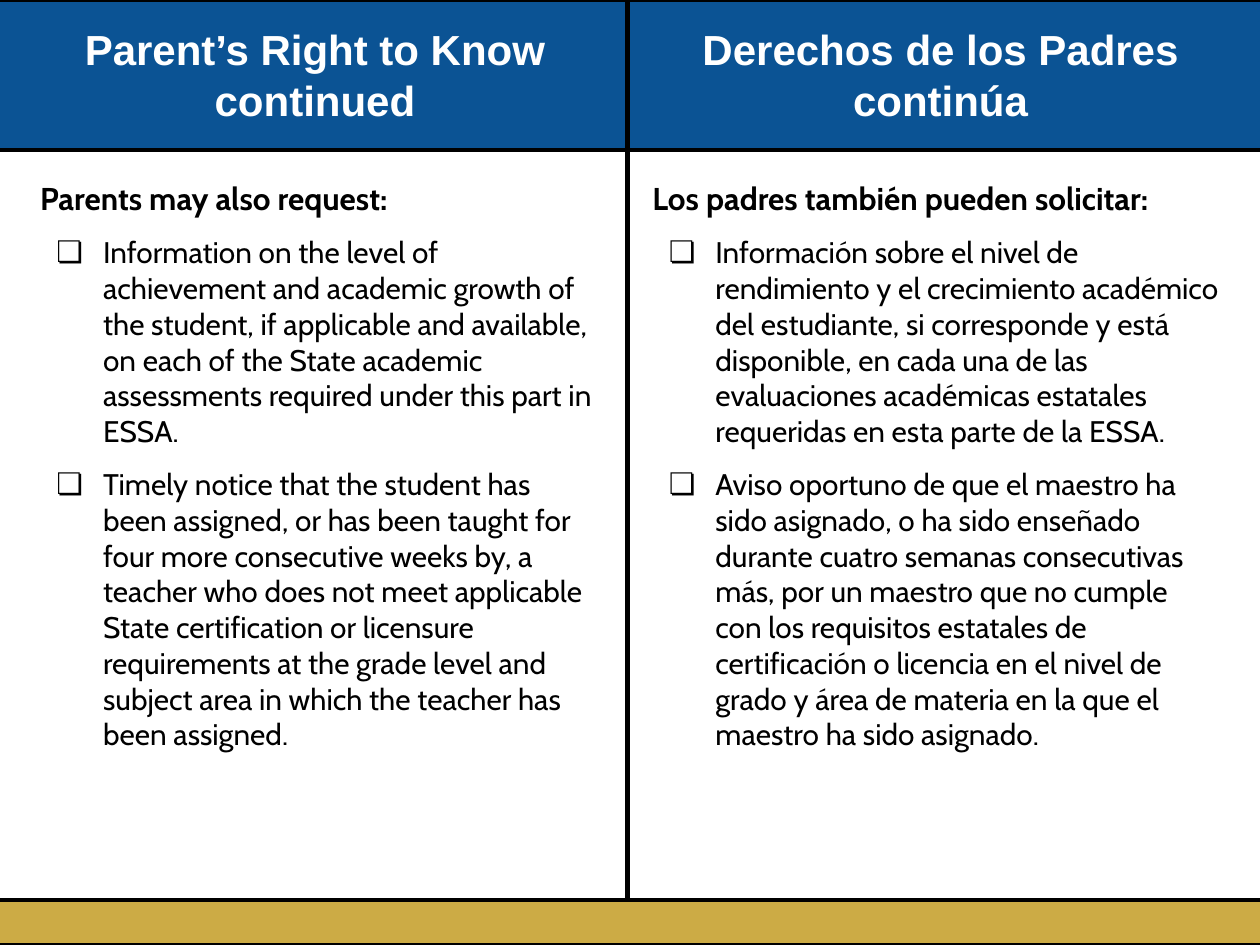
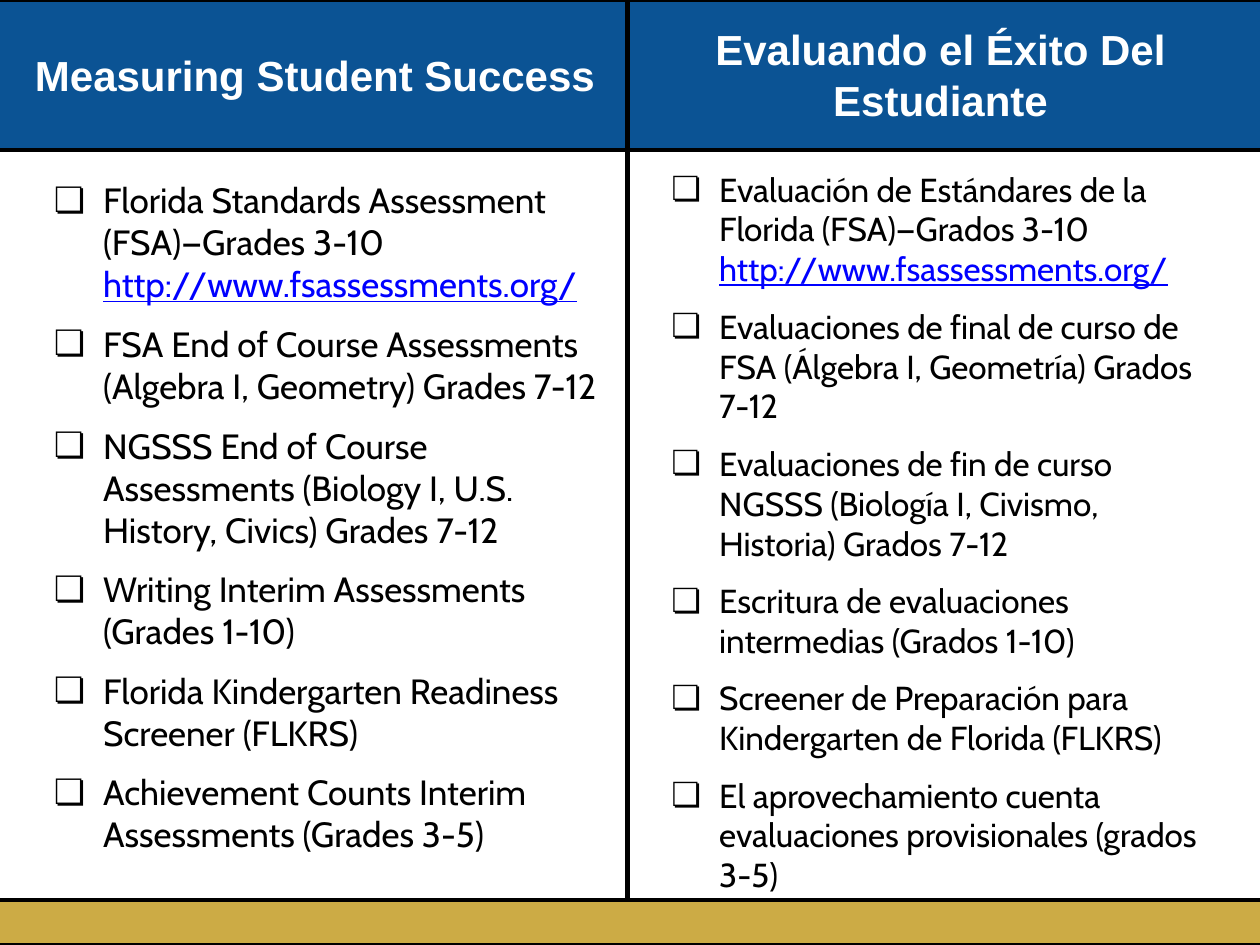
from lxml.etree import SubElement
from pptx import Presentation
from pptx.dml.color import RGBColor
from pptx.enum.shapes import MSO_CONNECTOR as Connector, MSO_SHAPE as Shape
from pptx.enum.text import MSO_ANCHOR as Anchor, MSO_AUTO_SIZE as AutoSize, PP_ALIGN as Align
from pptx.oxml.ns import qn
from pptx.util import Inches, Pt

BLACK, WHITE, BLUE, GOLD, LINK = "000000", "FFFFFF", "0B5394", "CCAB45", "0000FF"
HEADING_FONT, BODY_FONT = "Arial", "Cabin"
HEADING_PLACES = [(0.15, 0.21, 4.7, 0.76), (5.08, 0.21, 4.77, 0.76)]
LINK_TEXT = "http://www.fsassessments.org/"

SLIDES = [
    [
        {
            "heading": "Parent’s Right to Know continued",
            "place": (0.22, 1.32, 4.63, 5.63), "size": 17, "hanging": 0.37,
            "lead": "Parents may also request:",
            "items": [
                "Information on the level of achievement and academic growth of the student, "
                "if applicable and available, on each of the State academic assessments "
                "required under this part in ESSA.",
                "Timely notice that the student has been assigned, or has been taught for four "
                "more consecutive weeks by, a teacher who does not meet applicable State "
                "certification or licensure requirements at the grade level and subject area "
                "in which the teacher has been assigned.",
            ],
        },
        {
            "heading": "Derechos de los Padres continúa",
            "place": (5.08, 1.32, 4.7, 5.63), "size": 17, "hanging": 0.37,
            "lead": "Los padres también pueden solicitar:",
            "items": [
                "Información sobre el nivel de rendimiento y el crecimiento académico del "
                "estudiante, si corresponde y está disponible, en cada una de las evaluaciones "
                "académicas estatales requeridas en esta parte de la ESSA.",
                "Aviso oportuno de que el maestro ha sido asignado, o ha sido enseñado durante "
                "cuatro semanas consecutivas más, por un maestro que no cumple con los "
                "requisitos estatales de certificación o licencia en el nivel de grado y área "
                "de materia en la que el maestro ha sido asignado.",
            ],
        },
    ],
    [
        {
            "heading": "Measuring Student Success",
            "place": (0.22, 1.32, 4.63, 5.63), "size": 20, "hanging": 0.39,
            "items": [
                "Florida Standards Assessment (FSA)—Grades 3-10 " + LINK_TEXT,
                "FSA End of Course Assessments (Algebra I, Geometry) Grades 7-12",
                "NGSSS End of Course Assessments (Biology I, U.S. History, Civics) Grades 7-12",
                "Writing Interim Assessments (Grades 1-10)",
                "Florida Kindergarten Readiness Screener (FLKRS)",
                "Achievement Counts Interim Assessments (Grades 3-5)",
            ],
        },
        {
            "heading": "Evaluando el Éxito Del Estudiante",
            "place": (5.11, 1.24, 4.69, 5.63), "size": 19, "hanging": 0.38,
            "items": [
                "Evaluación de Estándares de la Florida (FSA)—Grados 3-10 " + LINK_TEXT,
                "Evaluaciones de final de curso de FSA (Álgebra I, Geometría) Grados 7-12",
                "Evaluaciones de fin de curso NGSSS (Biología I, Civismo, Historia) Grados 7-12",
                "Escritura de evaluaciones intermedias (Grados 1-10)",
                "Screener de Preparación para Kindergarten de Florida (FLKRS)",
                "El aprovechamiento cuenta evaluaciones provisionales (grados 3-5)",
            ],
        },
    ],
]


def color(value):
    """Turn a hex string into a colour."""
    return RGBColor.from_string(value)


def add_text(paragraph, text, font=BODY_FONT, size=18, fill=BLACK, bold=False, underline=False):
    """Add one formatted run to a paragraph."""
    run = paragraph.add_run()
    run.text = text
    run.font.name, run.font.size = font, Pt(size)
    run.font.bold, run.font.underline = bold, underline
    run.font.color.rgb = color(fill)


def add_band(slide, top, height, fill):
    """Add an outlined band across the slide."""
    band = slide.shapes.add_shape(
        Shape.RECTANGLE, Inches(-0.14), Inches(top), Inches(10.24), Inches(height))
    band.shadow.inherit = False
    band.fill.solid()
    band.fill.fore_color.rgb = color(fill)
    band.line.color.rgb = color(BLACK)
    band.line.width = Pt(2.25)


def add_divider(slide):
    """Add the vertical line between the two languages."""
    divider = slide.shapes.add_connector(
        Connector.STRAIGHT, Inches(4.98), Inches(0), Inches(4.98), Inches(7.14))
    divider.line.color.rgb = color(BLACK)
    divider.line.width = Pt(3)
    SubElement(divider.element.spPr, qn("a:effectLst"))


def set_frame(shape, anchor):
    """Give a text shape its wrapping, insets and anchor, and return its frame."""
    frame = shape.text_frame
    frame.word_wrap, frame.auto_size = True, AutoSize.NONE
    frame.margin_left = frame.margin_right = Inches(0.1)
    frame.margin_top = frame.margin_bottom = Inches(0.1)
    frame.vertical_anchor = anchor
    return frame


def format_heading(shape, place, text):
    """Place a heading and fill in its text."""
    shape.left, shape.top, shape.width, shape.height = map(Inches, place)
    paragraph = set_frame(shape, Anchor.MIDDLE).paragraphs[0]
    paragraph.alignment = Align.CENTER
    add_text(paragraph, text, font=HEADING_FONT, size=24, fill=WHITE, bold=True)


def add_bullet(paragraph, hanging):
    """Give a paragraph a hanging box bullet."""
    properties = paragraph._p.get_or_add_pPr()
    properties.set("marL", str(Inches(0.5)))
    properties.set("indent", str(-Inches(hanging)))
    bullet_color = SubElement(properties, qn("a:buClr"))
    SubElement(bullet_color, qn("a:srgbClr"), val=BLACK)
    SubElement(properties, qn("a:buFont"), typeface=BODY_FONT)
    SubElement(properties, qn("a:buChar"), char="❏")


def add_body(slide, column):
    """Add the lead line and the bulleted items of one column."""
    box = slide.shapes.add_textbox(*map(Inches, column["place"]))
    box.fill.solid()
    box.fill.fore_color.rgb = color(WHITE)
    frame = set_frame(box, Anchor.TOP)
    lead = column.get("lead")
    if lead:
        add_text(frame.paragraphs[0], lead, bold=True)
    for index, item in enumerate(column["items"]):
        first = index == 0 and not lead
        paragraph = frame.paragraphs[0] if first else frame.add_paragraph()
        add_bullet(paragraph, column["hanging"])
        if not first:
            paragraph.space_before = Pt(10)
        plain, link, _ = item.partition(LINK_TEXT)
        add_text(paragraph, plain, size=column["size"])
        if link:
            add_text(paragraph, link, size=column["size"], fill=LINK, underline=True)


def add_slide(presentation, columns):
    """Build one slide with an English and a Spanish column."""
    slide = presentation.slides.add_slide(presentation.slide_layouts[5])
    add_band(slide, 0, 1.19, BLUE)
    title = slide.shapes.title
    slide.shapes.element.append(title.element)
    second_heading = slide.shapes.add_textbox(*map(Inches, HEADING_PLACES[1]))
    for shape, place, column in zip((title, second_heading), HEADING_PLACES, columns):
        format_heading(shape, place, column["heading"])
        add_body(slide, column)
    add_divider(slide)
    add_band(slide, 7.14, 0.36, GOLD)


def main():
    """Build and save the presentation."""
    presentation = Presentation()
    presentation.slide_width, presentation.slide_height = Inches(10), Inches(7.5)
    for columns in SLIDES:
        add_slide(presentation, columns)
    presentation.save("out.pptx")


if __name__ == "__main__":
    main()
